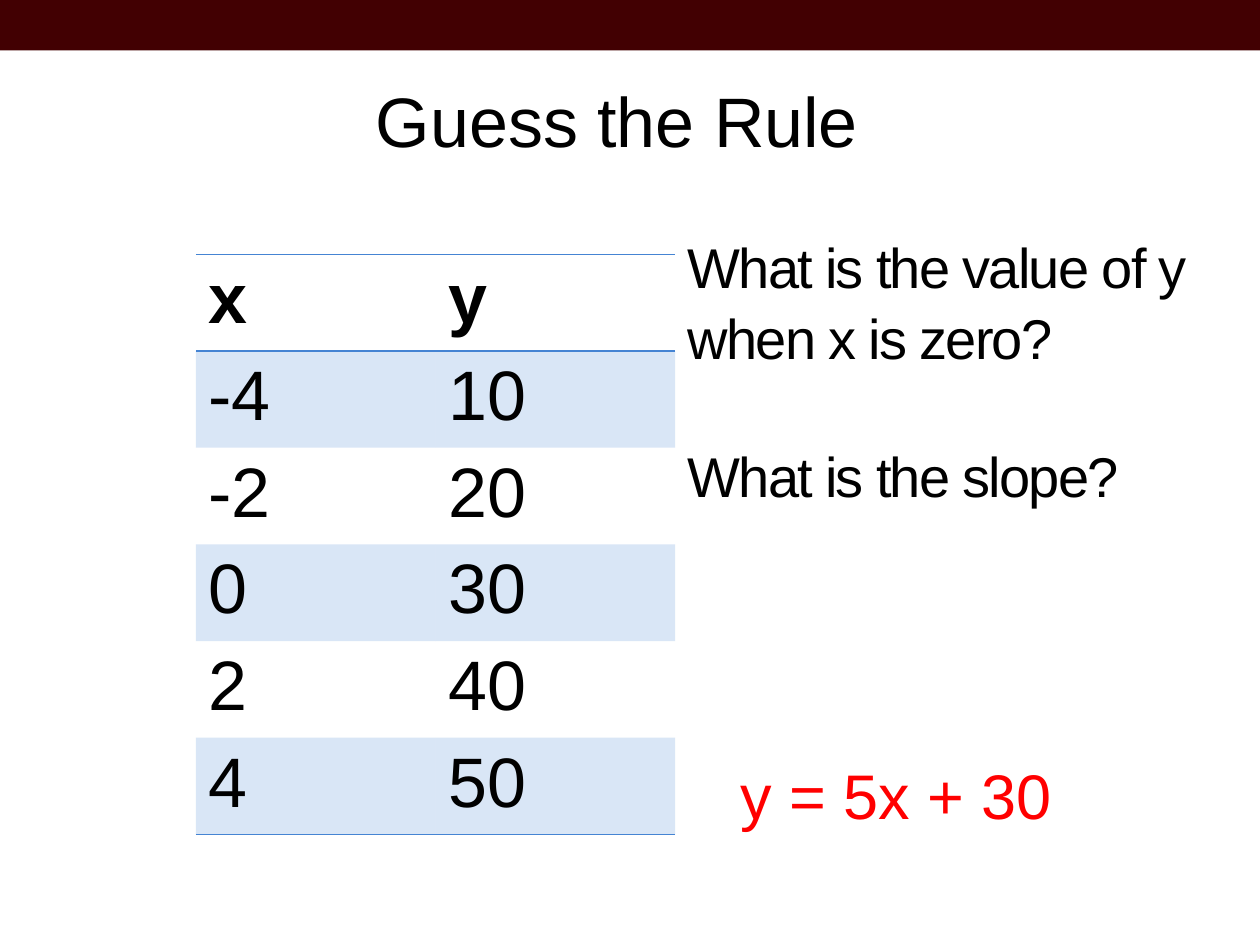
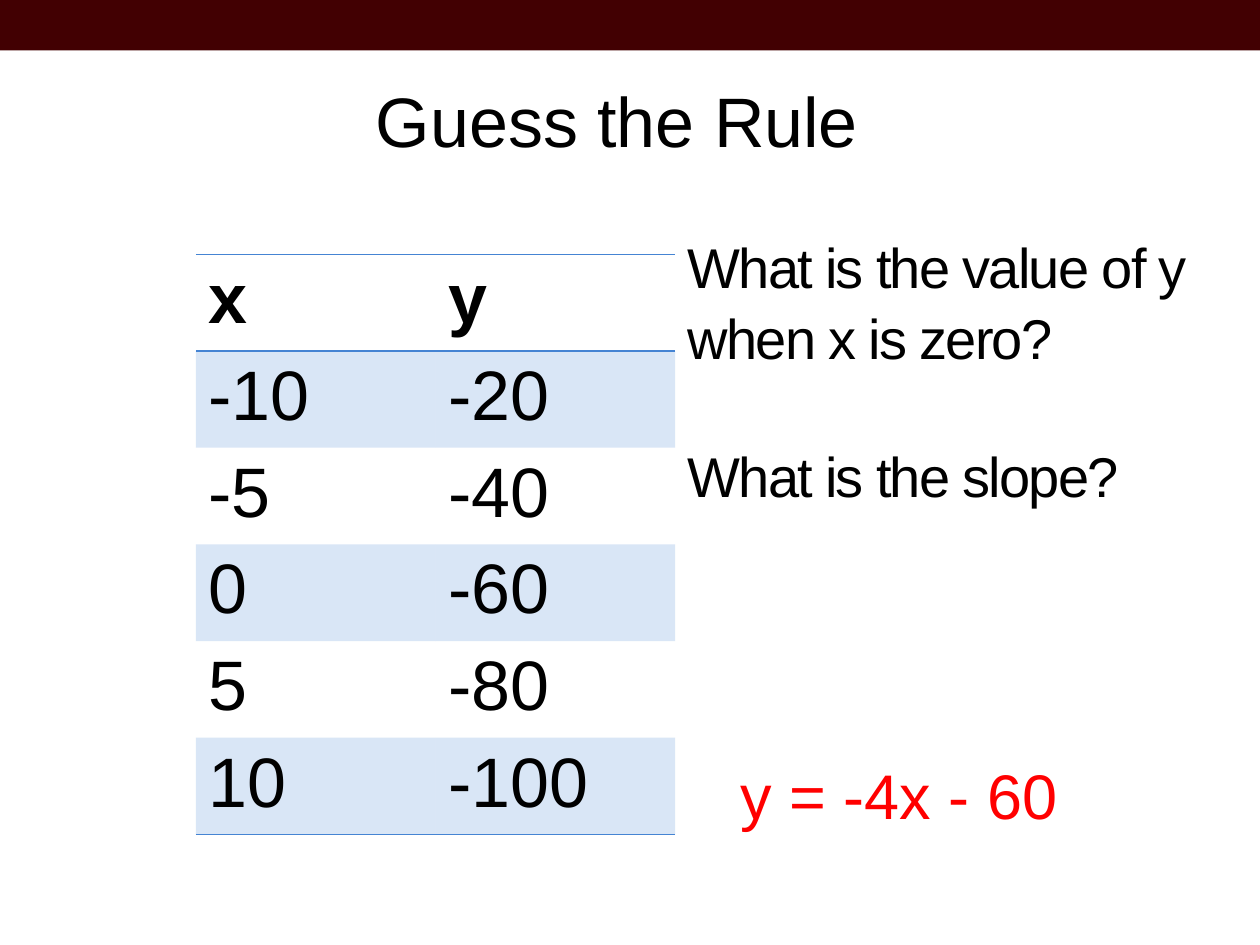
from lxml.etree import SubElement
from pptx import Presentation
from pptx.dml.color import RGBColor
from pptx.enum.shapes import MSO_SHAPE
from pptx.enum.text import PP_ALIGN
from pptx.oxml import parse_xml
from pptx.oxml.ns import nsdecls, qn
from pptx.util import Cm, Pt

FONT = "Arial"
BLACK, RED, BLUE, MAROON = "000000", "FF0000", "4584D3", "420002"
PLAIN_STYLE = "{2D5ABB26-0587-4C30-8999-92F81FD0307C}"
WIDTH, HEIGHT = Cm(25.4), Cm(19.05)
QUESTIONS = ["What is the value of y when x is zero?", "What is the slope?"]
RULES = [
    ("y = 5x + 30", [(-4, 10), (-2, 20), (0, 30), (2, 40), (4, 50)]),
    ("y = -4x - 60", [(-10, -20), (-5, -40), (0, -60), (5, -80), (10, -100)]),
]


def paint(color, code):
    color.rgb = RGBColor.from_string(code)


def style(para, size, code=BLACK, bold=False):
    for run in para.runs:
        run.font.name = FONT
        run.font.size = Pt(size)
        run.font.bold = bold
        paint(run.font.color, code)


def add_band(slide):
    band = slide.shapes.add_shape(MSO_SHAPE.RECTANGLE, 0, 0, WIDTH, Cm(1.02))
    band.shadow.inherit = False
    band.fill.solid()
    paint(band.fill.fore_color, MAROON)
    band.line.fill.background()


def add_text(slide, box, lines, size, code=BLACK, align=PP_ALIGN.LEFT):
    """Add a text box with one paragraph per line and return its paragraphs."""
    frame = slide.shapes.add_textbox(*map(Cm, box)).text_frame
    frame.word_wrap = True
    frame.text = "\n".join(lines)
    for para in frame.paragraphs:
        para.alignment = align
        para.line_spacing = 1.05
        style(para, size, code)
    return frame.paragraphs


def add_asks(slide):
    """Add the questions in tight lettering, one empty line apart."""
    paras = add_text(slide, (13.61, 4.5, 12.7, 2.41), QUESTIONS, 32)
    for para in paras:
        for run in para.runs:
            run.font._element.set("spc", "-100")
    for para in paras[1:]:
        para.space_before = Pt(38.6)


def tint(cell):
    cell.fill.solid()
    paint(cell.fill.fore_color, BLUE)
    color = next(cell._tc.tcPr.iter(qn("a:srgbClr")))
    SubElement(color, qn("a:alpha")).set("val", "20000")


def rule_off(cell, sides):
    """Draw cell borders; sides holds T, B or both, in that order."""
    for place, side in enumerate(sides):
        line = parse_xml(
            f'<a:ln{side} {nsdecls("a")} w="12700"><a:solidFill>'
            f'<a:srgbClr val="{BLUE}"/></a:solidFill></a:ln{side}>')
        cell._tc.get_or_add_tcPr().insert(place, line)


def add_grid(slide, pairs):
    rows = [("x", "y"), *pairs]
    last = len(rows) - 1
    frame = slide.shapes.add_table(
        len(rows), 2, Cm(3.95), Cm(5.13), Cm(9.66), Cm(11.68))
    table = frame.table
    table._tbl.tblPr.find(qn("a:tableStyleId")).text = PLAIN_STYLE
    for r, row in enumerate(rows):
        for c, value in enumerate(row):
            cell = table.cell(r, c)
            cell.text_frame.text = str(value)
            style(cell.text_frame.paragraphs[0], 40, bold=r == 0)
            if r % 2:
                tint(cell)
            else:
                cell.fill.background()
            rule_off(cell, {0: "TB", last: "B"}.get(r, ""))


def add_page(deck, answer, pairs):
    slide = deck.slides.add_slide(deck.slide_layouts[6])
    add_band(slide)
    add_text(slide, (7.14, 1.35, 10.59, 1.96), ["Guess the Rule"], 40,
             align=PP_ALIGN.CENTER)
    add_grid(slide, pairs)
    add_text(slide, (14.68, 15.04, 13.69, 1.8), [answer], 36, RED)
    add_asks(slide)


def main():
    deck = Presentation()
    deck.slide_width, deck.slide_height = WIDTH, HEIGHT
    for answer, pairs in RULES:
        add_page(deck, answer, pairs)
    deck.save("out.pptx")


if __name__ == "__main__":
    main()
